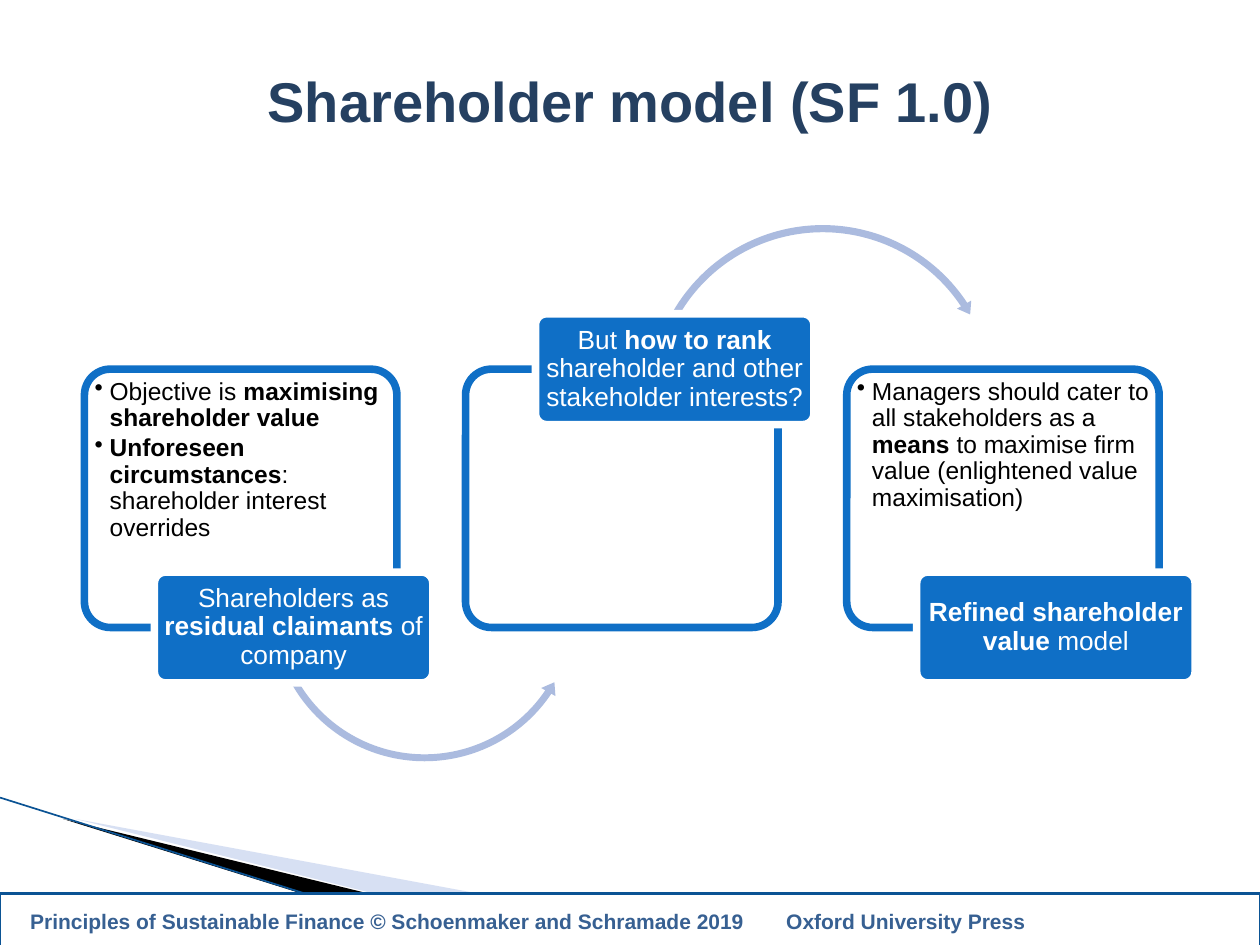
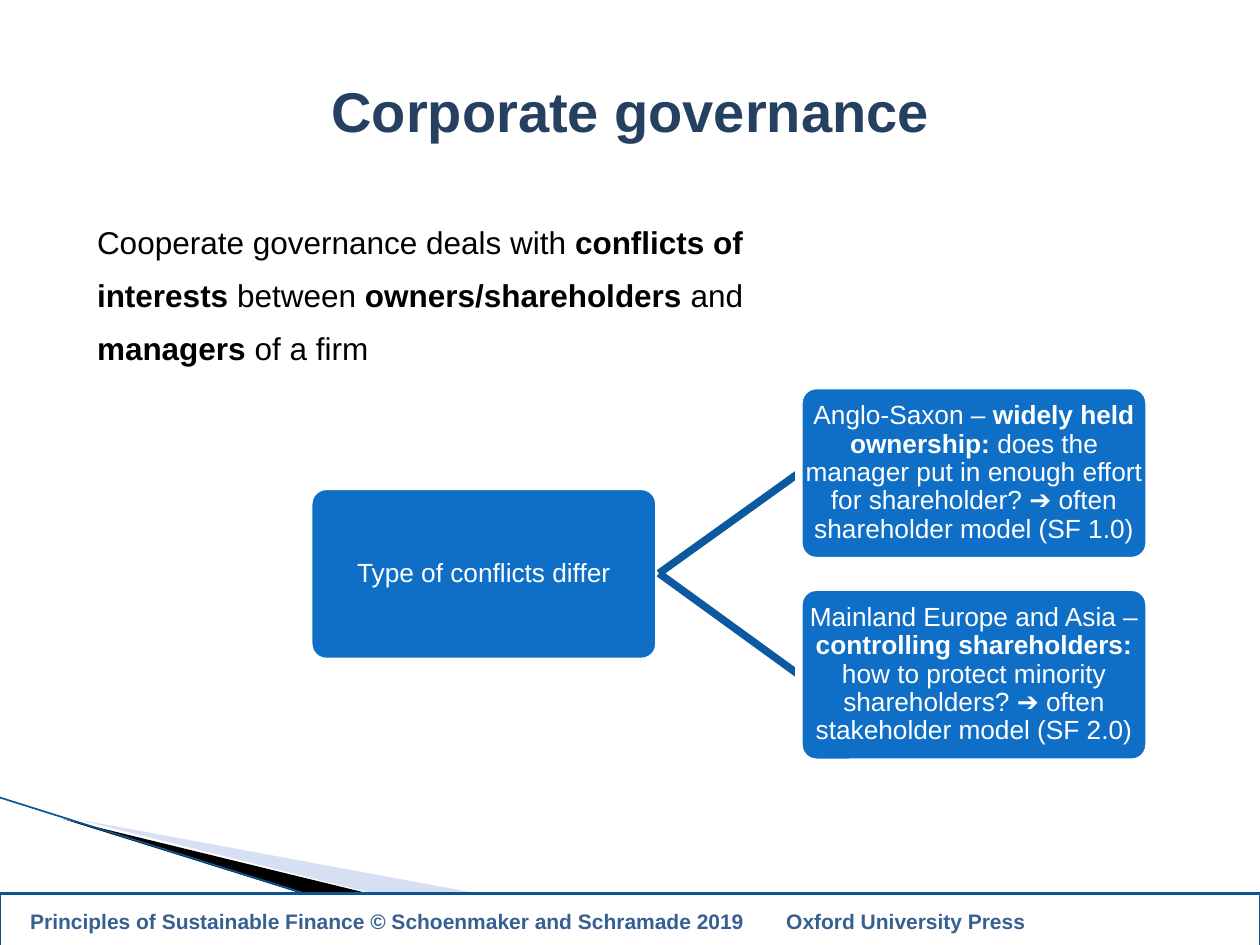
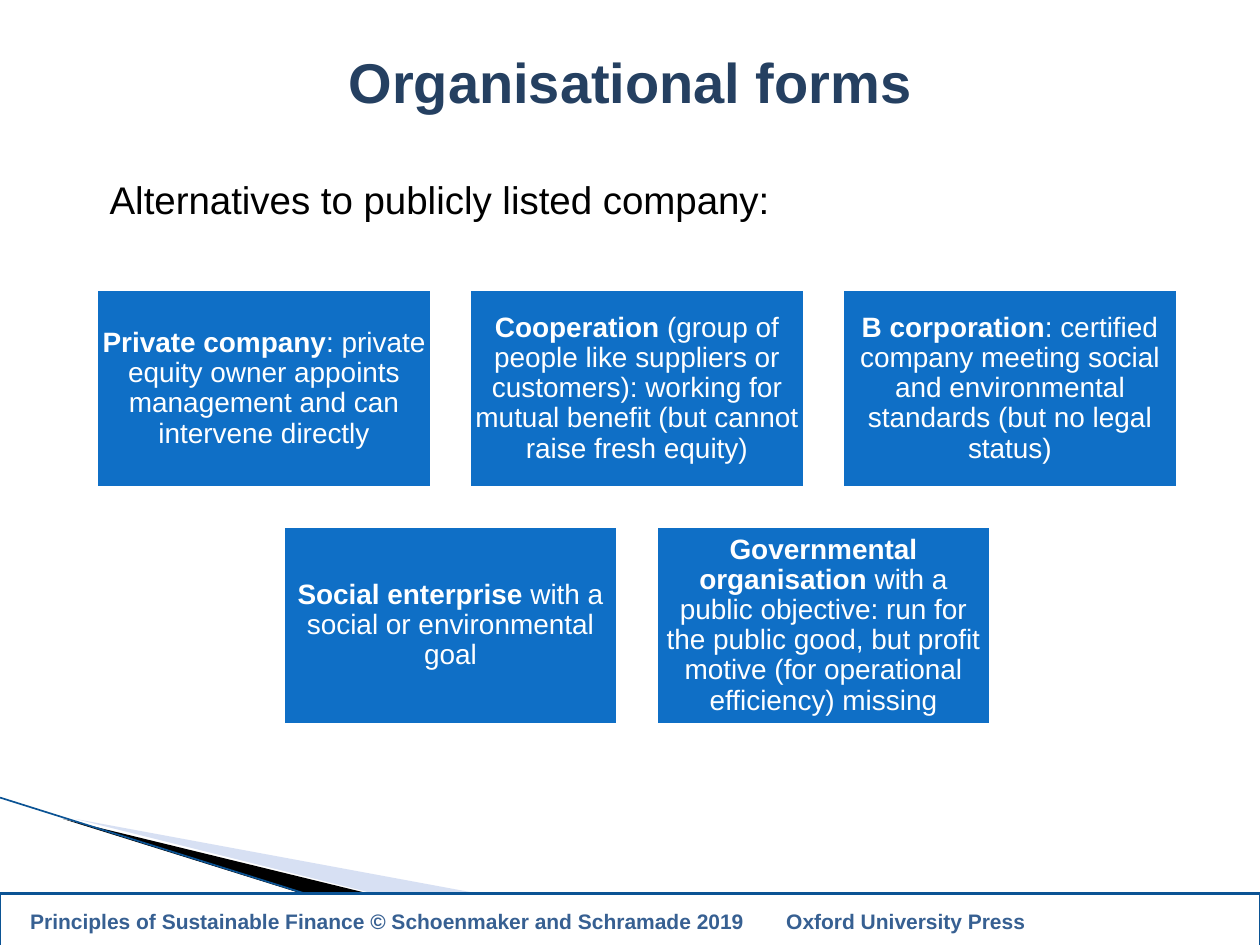
"""Build three slides on shareholder models, governance and organisational forms."""
from lxml import etree
from pptx import Presentation
from pptx import util as u
from pptx.dml.color import RGBColor
from pptx.enum import shapes, text
from pptx.oxml.ns import qn

BLUE, WHITE, BLACK = "0F6FC6", "FFFFFF", "000000"
NAVY, STEEL, RULE, WIRE, ARC = "254061", "376092", "0B5394", "0C599F", "ABBBDF"
THICK = 4.33
KIND = shapes.MSO_SHAPE
CENTER, LEFT = text.PP_ALIGN.CENTER, text.PP_ALIGN.LEFT
MIDDLE, TOP = text.MSO_ANCHOR.MIDDLE, text.MSO_ANCHOR.TOP


def paint(fill, value, alpha=None):
    """Fill a shape, line or font with a hex colour, or clear it."""
    if value is None:
        fill.background()
        return
    fill.solid()
    fill.fore_color.rgb = RGBColor.from_string(value)
    if alpha:
        tint = fill._xPr.find(qn("a:solidFill"))[0]
        etree.SubElement(tint, qn("a:alpha"), val=str(alpha * 1000))


def write(box, words, size=15, colour=WHITE, align=CENTER, anchor=MIDDLE, spacing=1.0,
          margins=(0.1, 0.05, 0.1, 0.05), after=0, indent=0, bullet=None, tab=None):
    """Write lines into a box; text between double asterisks is bold."""
    frame = box.text_frame
    frame.word_wrap = True
    frame.auto_size = text.MSO_AUTO_SIZE.NONE
    frame.vertical_anchor = anchor
    (frame.margin_left, frame.margin_top,
     frame.margin_right, frame.margin_bottom) = [u.Inches(m) for m in margins]
    for number, line in enumerate(words.split("\n")):
        para = frame.add_paragraph() if number else frame.paragraphs[0]
        layout = para._p.get_or_add_pPr()
        layout.set("marL", str(u.Inches(indent)))
        layout.set("indent", str(-u.Inches(indent) if bullet else 0))
        if bullet:
            etree.SubElement(layout, qn("a:buChar"), char=bullet)
        else:
            etree.SubElement(layout, qn("a:buNone"))
        if tab:
            stops = etree.SubElement(layout, qn("a:tabLst"))
            etree.SubElement(stops, qn("a:tab"), pos=str(u.Inches(tab)), algn="r")
        para.alignment = align
        para.line_spacing = spacing
        para.space_before, para.space_after = u.Pt(0), u.Pt(after)
        for order, piece in enumerate(line.split("**")):
            if piece:
                span = para.add_run()
                span.text = piece
                span.font.name, span.font.size = "Arial", u.Pt(size)
                span.font.bold = order % 2 == 1
                paint(span.font.fill, colour)


deck = Presentation()
deck.slide_width, deck.slide_height = u.Inches(10), u.Inches(7.5)
cell = deck.slide_width // 100

label = dict(spacing=0.9, margins=(0.03, 0.02, 0.03, 0.02))
panel = dict(size=14, colour=BLACK, align=LEFT, anchor=TOP, spacing=0.9, after=2,
             margins=(0.02, 0.02, 0, 0), indent=0.12, bullet="•")
node = dict(spacing=0.9, margins=(0, 0, 0, 0))
card = dict(size=16, spacing=0.9, margins=(0.06, 0.07, 0.06, 0.07))
lead = dict(colour=BLACK, align=LEFT, anchor=TOP)

# Each item: kind, place in grid cells, fill, alpha, line, adjustments, words, format
model = []
steps = [
    ("Objective is **maximising shareholder value**\n"
     "**Unforeseen circumstances**: shareholder interest overrides",
     "Shareholders as **residual claimants** of company", 45.4,
     (KIND.LEFT_CIRCULAR_ARROW, (21.2, 35.8, 25, 25), (0.022, 2.655, 20.41, 90.245, 0.026))),
    ("", "But **how to rank** shareholder and other stakeholder interests?", 24.9,
     (KIND.CIRCULAR_ARROW, (51.2, 17.5, 28.2, 28.2), (0.02, 2.342, 195.903, 125.755, 0.023))),
    ("Managers should cater to all stakeholders as a **means** to maximise firm value "
     "(enlightened value maximisation)",
     "**Refined shareholder value** model", 45.4, None),
]
for step, (points, caption, top, arc) in enumerate(steps):
    left = 6.7 + 30.25 * step
    model.append((KIND.ROUNDED_RECTANGLE, (left, 29.3, 24.8, 20.5), WHITE, 90, BLUE, [0.1],
                  points, panel))
    if arc:
        kind, place, bends = arc
        model.append((kind, place, ARC, None, None, bends, "", {}))
    model.append((KIND.ROUNDED_RECTANGLE, (left + 5.55, top, 22.1, 8.8), BLUE, None, WHITE,
                  [0.1], caption, label))

conflicts = []
nodes = [
    (24.5, 38.6, "Type of conflicts differ"),
    (63.4, 30.6, "Anglo-Saxon – **widely held ownership:** does the manager put in enough "
                 "effort for shareholder? ➔ often shareholder model (SF 1.0)"),
    (63.4, 46.6, "Mainland Europe and Asia – **controlling shareholders:** how to protect "
                 "minority shareholders? ➔ often stakeholder model (SF 2.0)"),
]
for left, top, words in nodes:
    if left > 50:
        conflicts.append(("line", (52.3, 45.5, left, top + 6.95), None, None, WIRE, [], "", {}))
    conflicts.append((KIND.ROUNDED_RECTANGLE, (left, top, 27.8, 13.9), BLUE, None, WHITE,
                      [0.1], words, node))

forms = []
kinds_of_firm = [
    "**Private company**: private equity owner appoints management and can intervene directly",
    "**Cooperation** (group of people like suppliers or customers): working for mutual "
    "benefit (but cannot raise fresh equity)",
    "**B corporation**: certified company meeting social and environmental standards "
    "(but no legal status)",
    "**Social enterprise** with a social or environmental goal",
    "**Governmental organisation** with a public objective: run for the public good, "
    "but profit motive (for operational efficiency) missing",
]
for index, words in enumerate(kinds_of_firm):
    row, column = divmod(index, 3)
    place = (7.5 + 29.6 * (column + row / 2), 22.8 + 18.8 * row, 26.9, 16.1)
    forms.append((KIND.RECTANGLE, place, BLUE, None, WHITE, [], words, card))

pages = [
    ("Shareholder model (SF 1.0)", 4.4, None, model),
    ("Corporate governance", 5.2,
     ("Cooperate governance deals with **conflicts of interests** between "
      "**owners/shareholders** and **managers** of a firm",
      (5.5, 16, 54.8, 16), dict(lead, size=18, spacing=1.4, indent=0.12)), conflicts),
    ("Organisational forms", 2.9,
     ("Alternatives to publicly listed company:",
      (7.7, 11.6, 66.7, 7.1), dict(lead, size=22, spacing=1.5)), forms),
]
wedges = [
    ("9DB2E1", 40, [(5.5, 65), (59.5, 75), (45.6, 75)]),
    (BLACK, None, [(5.3, 64.9), (45.7, 75), (37.2, 75)]),
]
wedges[1] = (BLACK, None, [(5.3, 64.9), (28.8, 70.8), (45.7, 75), (37.2, 75)][:1] + [(45.7, 75), (37.2, 75)])
footer = "**Principles of Sustainable Finance © Schoenmaker and Schramade 2019\tOxford University Press**"

for title, title_top, body, items in pages:
    page = deck.slides.add_slide(deck.slide_layouts[1 if body else 5])
    texts = [(page.shapes.title, (2.8, title_top, 94.5, 7.1), f"**{title}**",
              dict(size=32, colour=NAVY))]
    if body:
        words, place, style = body
        texts.append((page.placeholders[1], place, words, style))
    for box, place, words, style in texts:
        box.left, box.top, box.width, box.height = [round(n * cell) for n in place]
        write(box, words, **style)

    for colour, alpha, corners in wedges:
        outline = page.shapes.build_freeform(*corners[0], scale=cell)
        outline.add_line_segments(corners[1:])
        wedge = outline.convert_to_shape()
        paint(wedge.fill, colour, alpha)
        paint(wedge.line.fill, None)
    slope = page.shapes.add_connector(shapes.MSO_CONNECTOR.STRAIGHT, 0,
                                      round(63.3 * cell), round(37.2 * cell), 75 * cell)
    paint(slope.line.fill, RULE)
    slope.line.width = u.Pt(0.95)

    for kind, place, fill, alpha, line, bends, words, style in items:
        place = [round(n * cell) for n in place]
        if kind == "line":
            item = page.shapes.add_connector(shapes.MSO_CONNECTOR.STRAIGHT, *place)
        else:
            item = page.shapes.add_shape(kind, *place)
            paint(item.fill, fill, alpha)
            for number, bend in enumerate(bends):
                item.adjustments[number] = bend
        paint(item.line.fill, line)
        if line:
            item.line.width = u.Pt(THICK)
        if words:
            write(item, words, **style)

    band = page.shapes.add_shape(KIND.RECTANGLE, 0, round(70.9 * cell), deck.slide_width,
                                 round(4.4 * cell))
    paint(band.fill, WHITE)
    paint(band.line.fill, RULE)
    band.line.width = u.Pt(1.5)
    write(band, footer, size=12, colour=STEEL, align=LEFT,
          margins=(0.24, 0.05, 0.3, 0.05), tab=9.44)

    for drawn in page.shapes:
        if not drawn.is_placeholder:
            etree.SubElement(drawn._element.spPr, qn("a:effectLst"))

deck.save("out.pptx")
